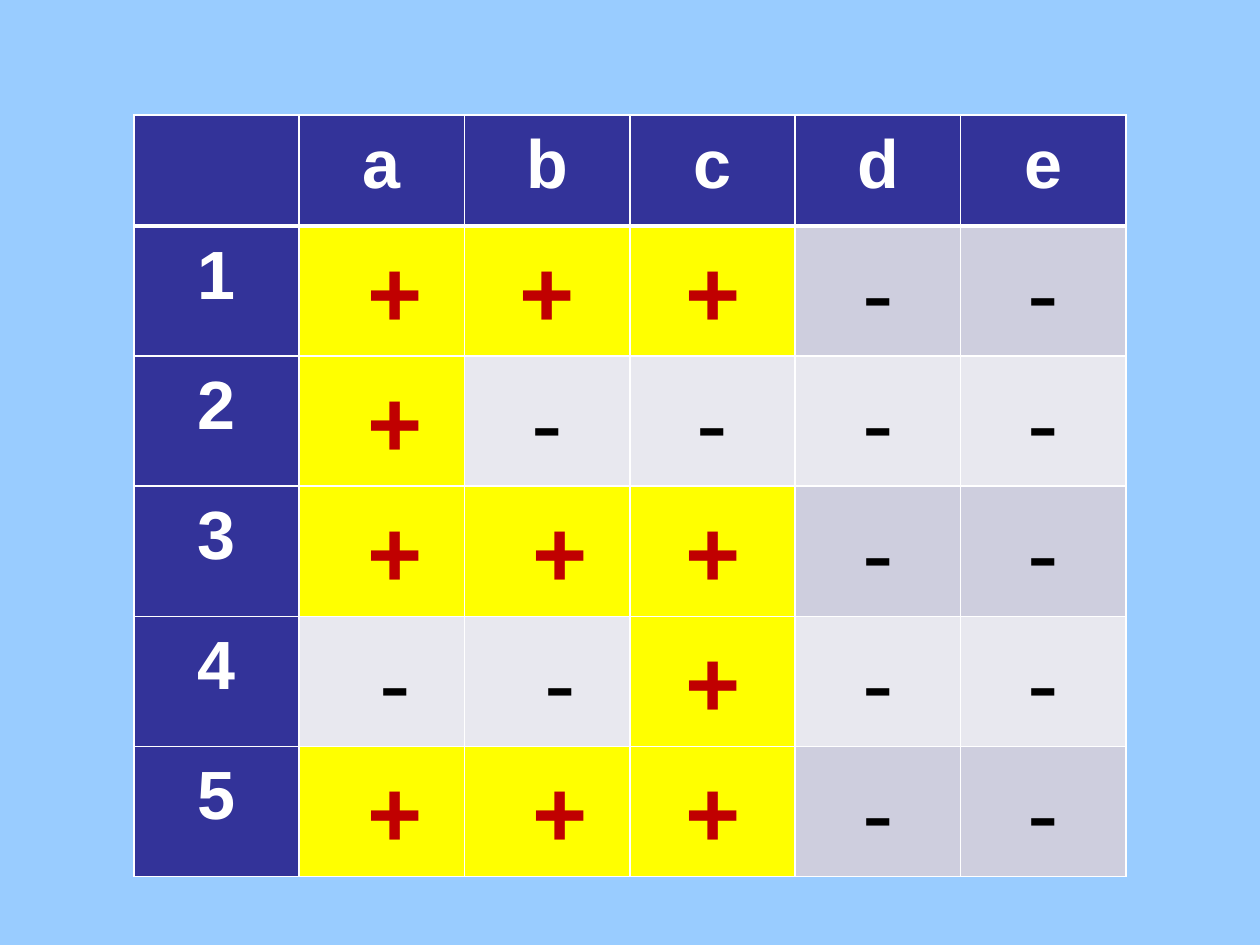
from dataclasses import dataclass

from lxml import etree
from pptx import Presentation
from pptx import util as u
from pptx.dml.color import RGBColor
from pptx.enum import text
from pptx.oxml import ns
from pptx.table import _Cell

COLORS = {
    "background": "99CCFF",
    "header": "333399",
    "white": "FFFFFF",
    "plus": "C00000",
    "minus": "000000",
    "highlight": "FFFF00",
    "odd_row": "CECEDE",
    "even_row": "E8E8EF",
}
COLUMN_LABELS = "abcde"
ROW_MARKS = ["+++--", "+----", "+++--", "--+--", "+++--"]
SHIFTED_COLUMNS = ["a", "a", "ab", "ab", "ab"]
LEFT, TOP = 76.5, 65.75
COLUMN_WIDTH = 94.5
HEADER_HEIGHT, ROW_HEIGHT = 63.3, 74.4
SIDE_MARGIN, MARK_SHIFT = 3, 15
THIN, THICK = 1, 3


@dataclass(frozen=True)
class CellStyle:
    fill: str
    color: str
    size: float
    bold: bool


HEADING = CellStyle("header", "white", 39, True)
PLUS = CellStyle("highlight", "plus", 54, True)
MINUS_ODD = CellStyle("odd_row", "minus", 54, False)
MINUS_EVEN = CellStyle("even_row", "minus", 54, False)


def rgb(name: str) -> RGBColor:
    return RGBColor.from_string(COLORS[name])


def set_borders(cell: _Cell, top: float = THIN, bottom: float = THIN) -> None:
    properties = cell._tc.get_or_add_tcPr()
    widths = {"lnL": THIN, "lnR": THIN, "lnT": top, "lnB": bottom}
    for index, (tag, width) in enumerate(widths.items()):
        line = etree.Element(ns.qn(f"a:{tag}"), w=str(u.Pt(width)))
        fill = etree.SubElement(line, ns.qn("a:solidFill"))
        etree.SubElement(fill, ns.qn("a:srgbClr"), val=COLORS["white"])
        properties.insert(index, line)


def fill_cell(cell: _Cell, label: str, style: CellStyle, shift: float = 0) -> None:
    cell.fill.solid()
    cell.fill.fore_color.rgb = rgb(style.fill)
    cell.margin_left = u.Pt(SIDE_MARGIN + shift)
    cell.margin_right = u.Pt(SIDE_MARGIN)
    cell.margin_top = cell.margin_bottom = u.Pt(0)
    if not label:
        return
    paragraph = cell.text_frame.paragraphs[0]
    paragraph.alignment = text.PP_ALIGN.CENTER
    paragraph.line_spacing = 1.15
    run = paragraph.add_run()
    run.text = label
    run.font.name = "Arial"
    run.font.size = u.Pt(style.size)
    run.font.bold = style.bold
    run.font.color.rgb = rgb(style.color)


def main() -> None:
    presentation = Presentation()
    presentation.slide_width = u.Pt(720)
    presentation.slide_height = u.Pt(540)
    slide = presentation.slides.add_slide(presentation.slide_layouts[6])
    slide.background.fill.solid()
    slide.background.fill.fore_color.rgb = rgb("background")

    row_count, column_count = len(ROW_MARKS) + 1, len(COLUMN_LABELS) + 1
    table = slide.shapes.add_table(
        row_count, column_count, u.Pt(LEFT), u.Pt(TOP),
        u.Pt(COLUMN_WIDTH * column_count),
        u.Pt(HEADER_HEIGHT + ROW_HEIGHT * len(ROW_MARKS)),
    ).table
    table.first_row = table.horz_banding = False
    for column in table.columns:
        column.width = u.Pt(COLUMN_WIDTH)
    for row in table.rows:
        row.height = u.Pt(ROW_HEIGHT)
    table.rows[0].height = u.Pt(HEADER_HEIGHT)

    for column_index, label in enumerate(["", *COLUMN_LABELS]):
        cell = table.cell(0, column_index)
        fill_cell(cell, label, HEADING)
        set_borders(cell, bottom=THICK)

    for row_index, (marks, shifted) in enumerate(zip(ROW_MARKS, SHIFTED_COLUMNS), 1):
        fill_cell(table.cell(row_index, 0), str(row_index), HEADING)
        minus = MINUS_ODD if row_index % 2 else MINUS_EVEN
        for column_index, (label, mark) in enumerate(zip(COLUMN_LABELS, marks), 1):
            style = PLUS if mark == "+" else minus
            shift = MARK_SHIFT if label in shifted else 0
            fill_cell(table.cell(row_index, column_index), mark, style, shift)
        for cell in table.rows[row_index].cells:
            set_borders(cell, top=THICK if row_index == 1 else THIN)

    presentation.save("out.pptx")


if __name__ == "__main__":
    main()
